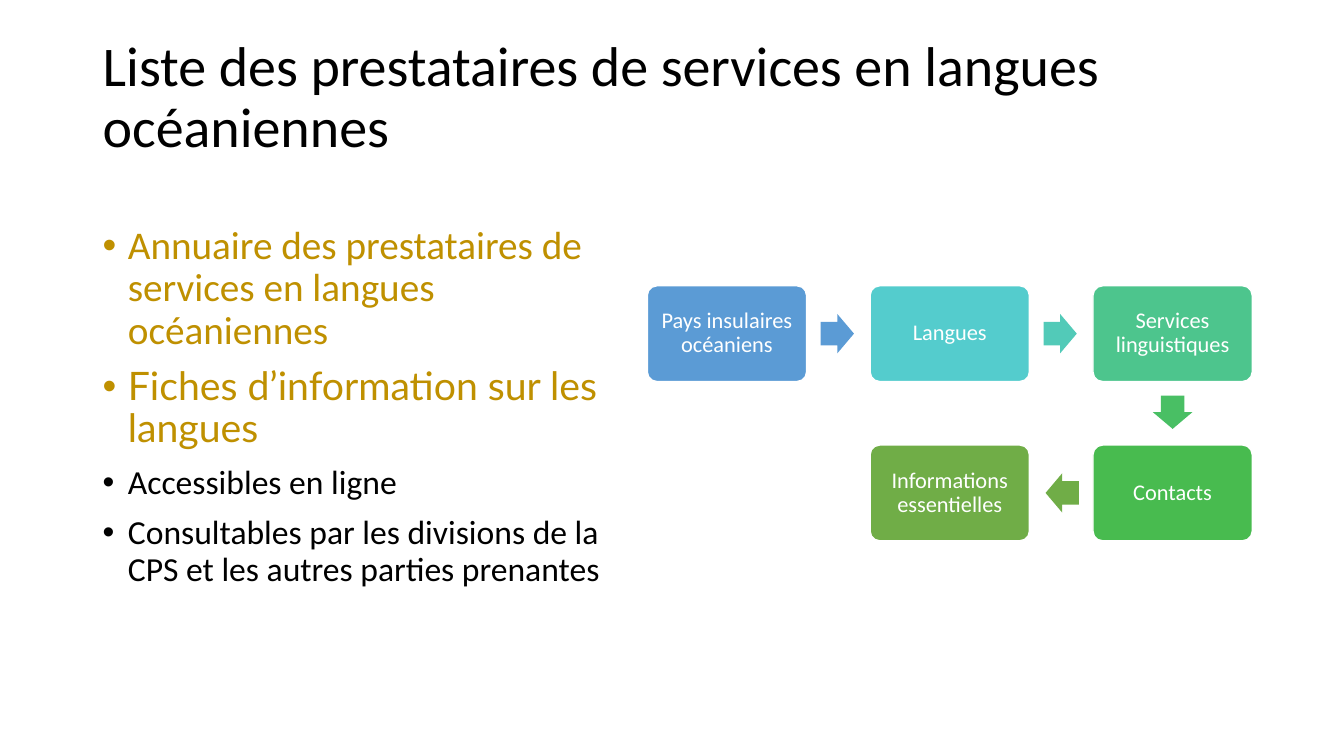
from lxml import etree
from pptx import Presentation
from pptx.dml.color import RGBColor
from pptx.enum.shapes import MSO_SHAPE
from pptx.enum.text import MSO_ANCHOR, PP_ALIGN
from pptx.oxml.ns import qn
from pptx.util import Inches, Pt

BOX, ARROW = MSO_SHAPE.ROUNDED_RECTANGLE, MSO_SHAPE.RIGHT_ARROW
COLORS = {
    "black": "000000", "white": "FFFFFF", "gold": "BF9000",
    "blue": "5B9BD5", "cyan": "54CCCD", "teal": "52CAB8", "mint": "4DC58D",
    "emerald": "49BF64", "green": "48BB4F", "olive": "70AD47",
}


def set_font(p, name, size, color):
    p.line_spacing = 0.9
    for r in p.runs:
        r.font.name, r.font.size = name, Pt(size)
        r.font.color.rgb = RGBColor.from_string(COLORS[color])


def add_filled(kind, cx, cy, width, height, color):
    """Add a plain preset shape centred on (cx, cy), in inches."""
    s = slide.shapes.add_shape(kind, Inches(cx - width / 2), Inches(cy - height / 2),
                               Inches(width), Inches(height))
    s.shadow.inherit = False
    s.fill.solid()
    s.fill.fore_color.rgb = RGBColor.from_string(COLORS[color])
    s.line.fill.background()
    return s


prs = Presentation()
prs.slide_width, prs.slide_height = Inches(13.33), Inches(7.5)
slide = prs.slides.add_slide(prs.slide_layouts[6])

# Title
title = slide.shapes.add_textbox(Inches(0.92), Inches(0.73), Inches(11.5), Inches(0.9))
tf = title.text_frame
tf.word_wrap = True
tf.vertical_anchor = MSO_ANCHOR.BOTTOM
tf.text = "Liste des prestataires de services en langues océaniennes"
set_font(tf.paragraphs[0], "Calibri", 40, "black")

# Bulleted list
bullets = [
    ("Annuaire des prestataires de services en langues océaniennes", "Calibri", 28, "gold"),
    ("Fiches d’information sur les langues", "Lato", 28, "gold"),
    ("Accessibles en ligne", "Calibri", 24, "black"),
    ("Consultables par les divisions de la CPS et les autres parties prenantes",
     "Calibri", 24, "black"),
]
body = slide.shapes.add_textbox(Inches(0.92), Inches(2.19), Inches(5.28), Inches(4.76))
tf = body.text_frame
tf.word_wrap = True
for i, (text, font, size, color) in enumerate(bullets):
    p = tf.paragraphs[0] if i == 0 else tf.add_paragraph()
    p.text = text
    set_font(p, font, size, color)
    p.space_before = Pt(10 if i else 0)
    pPr = p._p.get_or_add_pPr()
    pPr.set("marL", str(Inches(0.25)))
    pPr.set("indent", str(-Inches(0.25)))
    etree.SubElement(pPr, qn("a:buFont")).set("typeface", "Arial")
    etree.SubElement(pPr, qn("a:buChar")).set("char", "•")

# Process diagram: boxes on a grid, each arrow leaving the box towards the next one
BOX_W, BOX_H = 1.58, 0.95
ARROW_LENGTH, ARROW_H, GAP = 0.33, 0.39, 0.14
FIRST_X, FIRST_Y, STEP_X, STEP_Y = 7.21, 3.31, 2.21, 1.58
DIRECTIONS = {0: (1, 0), 90: (0, 1), 180: (-1, 0)}
steps = [  # text, column, row, box colour, arrow rotation, arrow colour
    ("Pays insulaires océaniens", 0, 0, "blue", 0, "blue"),
    ("Langues", 1, 0, "cyan", 0, "teal"),
    ("Services linguistiques", 2, 0, "mint", 90, "emerald"),
    ("Contacts", 2, 1, "green", 180, "olive"),
    ("Informations essentielles", 1, 1, "olive", None, None),
]
for text, col, row, color, rotation, arrow_color in steps:
    cx, cy = FIRST_X + col * STEP_X, FIRST_Y + row * STEP_Y
    s = add_filled(BOX, cx, cy, BOX_W, BOX_H, color)
    s.adjustments[0] = 0.1
    s.line.color.rgb = RGBColor.from_string(COLORS["white"])
    s.line.width = Pt(1)
    tf = s.text_frame
    tf.word_wrap = True
    tf.vertical_anchor = MSO_ANCHOR.MIDDLE
    tf.margin_left = tf.margin_right = tf.margin_top = tf.margin_bottom = Inches(0.07)
    tf.text = text
    tf.paragraphs[0].alignment = PP_ALIGN.CENTER
    set_font(tf.paragraphs[0], "Calibri", 16, "white")
    if rotation is not None:
        dx, dy = DIRECTIONS[rotation]
        reach = GAP + ARROW_LENGTH / 2
        arrow = add_filled(ARROW, cx + dx * (BOX_W / 2 + reach), cy + dy * (BOX_H / 2 + reach),
                           ARROW_LENGTH, ARROW_H, arrow_color)
        arrow.adjustments[0] = 0.6
        arrow.rotation = rotation

prs.save("out.pptx")
